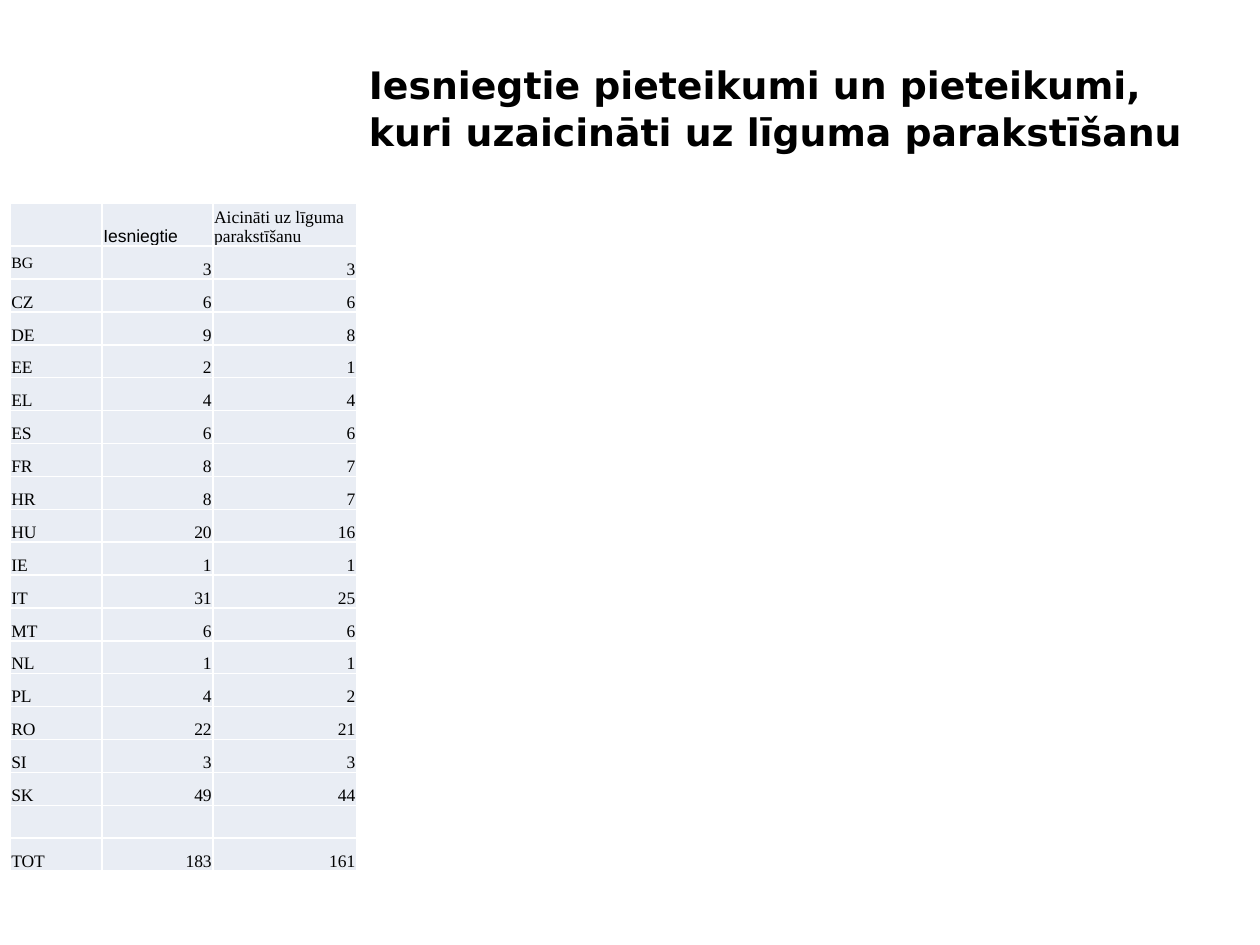
"""Build the slide of submitted and invited applications by country."""
from lxml import etree
from pptx import Presentation, util as u
from pptx.dml.color import RGBColor
from pptx.enum import text as t
from pptx.oxml import ns

WIDTH, HEIGHT = u.Inches(10), u.Inches(7.5)
SERIF = "Times New Roman"


def color(code):
    return RGBColor.from_string(code)


def write(frame, words, size=10, font=SERIF, bold=False, align=t.PP_ALIGN.LEFT, spacing=None):
    paragraph = frame.paragraphs[0]
    paragraph.alignment = align
    paragraph.line_spacing = spacing
    if not words:
        etree.SubElement(paragraph._p, ns.qn("a:endParaRPr"), sz=str(size * 100))
        return
    run = paragraph.add_run()
    run.text = words
    run.font.size, run.font.name, run.font.bold = u.Pt(size), font, bold
    run.font.color.rgb = color("000000")


deck = Presentation()
deck.slide_width, deck.slide_height = WIDTH, HEIGHT
slide = deck.slides.add_slide(deck.slide_layouts[6])

heading = slide.shapes.add_textbox(
    int(WIDTH * 0.283), int(HEIGHT * 0.056), int(WIDTH * 0.667), int(HEIGHT * 0.15)
).text_frame
heading.word_wrap = True
heading.vertical_anchor = t.MSO_ANCHOR.TOP
write(heading, "Iesniegtie pieteikumi un pieteikumi, kuri uzaicināti uz līguma parakstīšanu",
      size=21.6, font="DejaVu Sans", bold=True, spacing=1.05)

applications = [
    ("", "Iesniegtie", "Aicināti uz līguma parakstīšanu"),
    ("BG", 3, 3), ("CZ", 6, 6), ("DE", 9, 8), ("EE", 2, 1), ("EL", 4, 4),
    ("ES", 6, 6), ("FR", 8, 7), ("HR", 8, 7), ("HU", 20, 16), ("IE", 1, 1),
    ("IT", 31, 25), ("MT", 6, 6), ("NL", 1, 1), ("PL", 4, 2), ("RO", 22, 21),
    ("SI", 3, 3), ("SK", 49, 44), ("", "", ""), ("TOT", 183, 161),
]
column_widths = [0.73, 0.88, 1.14]
header_height, body_height = u.Inches(0.3), u.Inches(4.96)
countries = slide.shapes.add_table(
    len(applications), len(column_widths), int(WIDTH * 0.008), u.Inches(1.61),
    u.Inches(sum(column_widths)), header_height + body_height
).table
countries.first_row = countries.horz_banding = False
for column, width in zip(countries.columns, column_widths):
    column.width = u.Inches(width)

for r, record in enumerate(applications):
    countries.rows[r].height = body_height // (len(applications) - 1) if r else header_height
    for c, value in enumerate(record):
        cell = countries.cell(r, c)
        cell.margin_left = cell.margin_right = cell.margin_top = u.Inches(0.01)
        cell.margin_bottom = 0
        cell.vertical_anchor = t.MSO_ANCHOR.MIDDLE if value == "BG" else t.MSO_ANCHOR.BOTTOM
        for side in ("lnL", "lnR", "lnT", "lnB"):
            border = etree.SubElement(cell._tc.get_or_add_tcPr(), ns.qn(f"a:{side}"), w=str(u.Pt(1)))
            paint = etree.SubElement(border, ns.qn("a:solidFill"))
            etree.SubElement(paint, ns.qn("a:srgbClr"), val="FFFFFF")
        cell.fill.solid()
        cell.fill.fore_color.rgb = color("E9EDF4")
        write(cell.text_frame, str(value),
              size=9 if value == "BG" else 10,
              font="Arial" if value == "Iesniegtie" else SERIF,
              align=t.PP_ALIGN.RIGHT if isinstance(value, int) else t.PP_ALIGN.LEFT)

deck.save("out.pptx")
